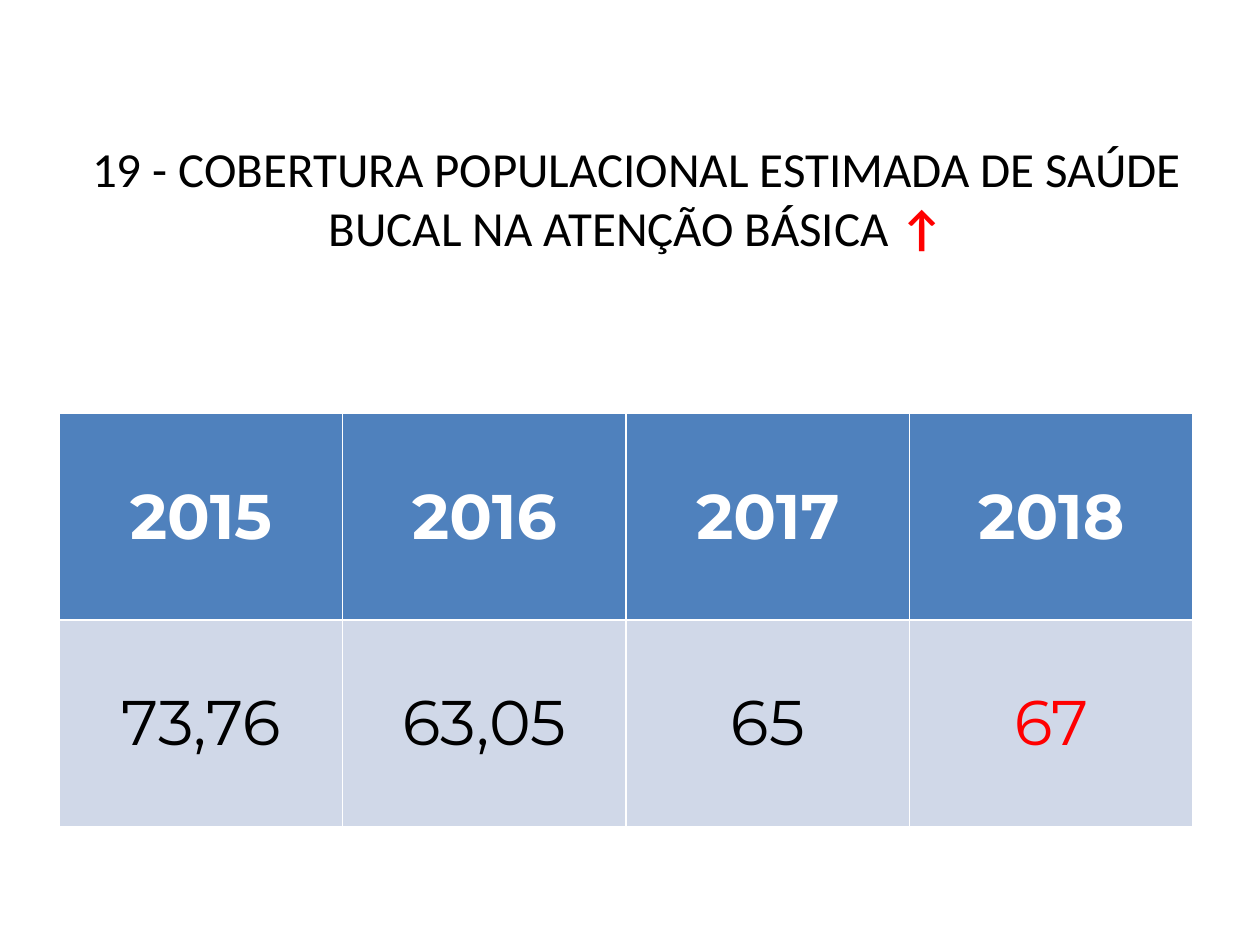
from dataclasses import dataclass

from pptx import Presentation
from pptx import util as u
from pptx.dml.color import RGBColor
from pptx.enum import text

COLORS = {"black": "000000", "white": "FFFFFF", "red": "FF0000",
          "header": "4F81BD", "body": "D0D8E8"}


@dataclass
class YearColumn:
    year: str
    coverage: str
    color: str = "black"


COLUMNS = [
    YearColumn("2015", "73,76"),
    YearColumn("2016", "63,05"),
    YearColumn("2017", "65"),
    YearColumn("2018", "67", "red"),
]


def rgb(name: str) -> RGBColor:
    return RGBColor.from_string(COLORS[name])


def add_title(s, title: str, arrow: str) -> None:
    sp = s.shapes.add_textbox(u.Inches(0.55), u.Inches(0.16), u.Inches(9), u.Inches(2.81))
    tf = sp.text_frame
    tf.word_wrap = True
    tf.vertical_anchor = text.MSO_ANCHOR.MIDDLE
    p = tf.paragraphs[0]
    p.alignment = text.PP_ALIGN.CENTER
    p.font.size = u.Pt(28)
    p.font.name = "Calibri"
    for content, color, bold in ((title, "black", False), (arrow, "red", True)):
        r = p.add_run()
        r.text = content
        r.font.color.rgb = rgb(color)
        r.font.bold = bold


def fill_cell(cell, content: str, color: str, fill: str, bold: bool) -> None:
    cell.fill.solid()
    cell.fill.fore_color.rgb = rgb(fill)
    cell.vertical_anchor = text.MSO_ANCHOR.MIDDLE
    cell.text = content
    p = cell.text_frame.paragraphs[0]
    p.alignment = text.PP_ALIGN.CENTER
    p.font.size = u.Pt(36)
    p.font.name = "Montserrat"
    p.font.bold = bold
    p.font.color.rgb = rgb(color)


def add_coverage_table(s, columns: list[YearColumn]) -> None:
    table = s.shapes.add_table(2, len(columns), u.Inches(0.47), u.Inches(3.28),
                               u.Inches(9), u.Inches(3.28)).table
    for i, column in enumerate(columns):
        fill_cell(table.cell(0, i), column.year, "white", "header", True)
        fill_cell(table.cell(1, i), column.coverage, column.color, "body", False)


def main() -> None:
    """Build the slide on oral health coverage by year."""
    prs = Presentation()
    prs.slide_width, prs.slide_height = u.Inches(10), u.Inches(7.5)
    s = prs.slides.add_slide(prs.slide_layouts[6])
    add_title(s, "19 - COBERTURA POPULACIONAL ESTIMADA DE SAÚDE BUCAL NA ATENÇÃO BÁSICA ", "↑")
    add_coverage_table(s, COLUMNS)
    prs.save("out.pptx")


if __name__ == "__main__":
    main()
